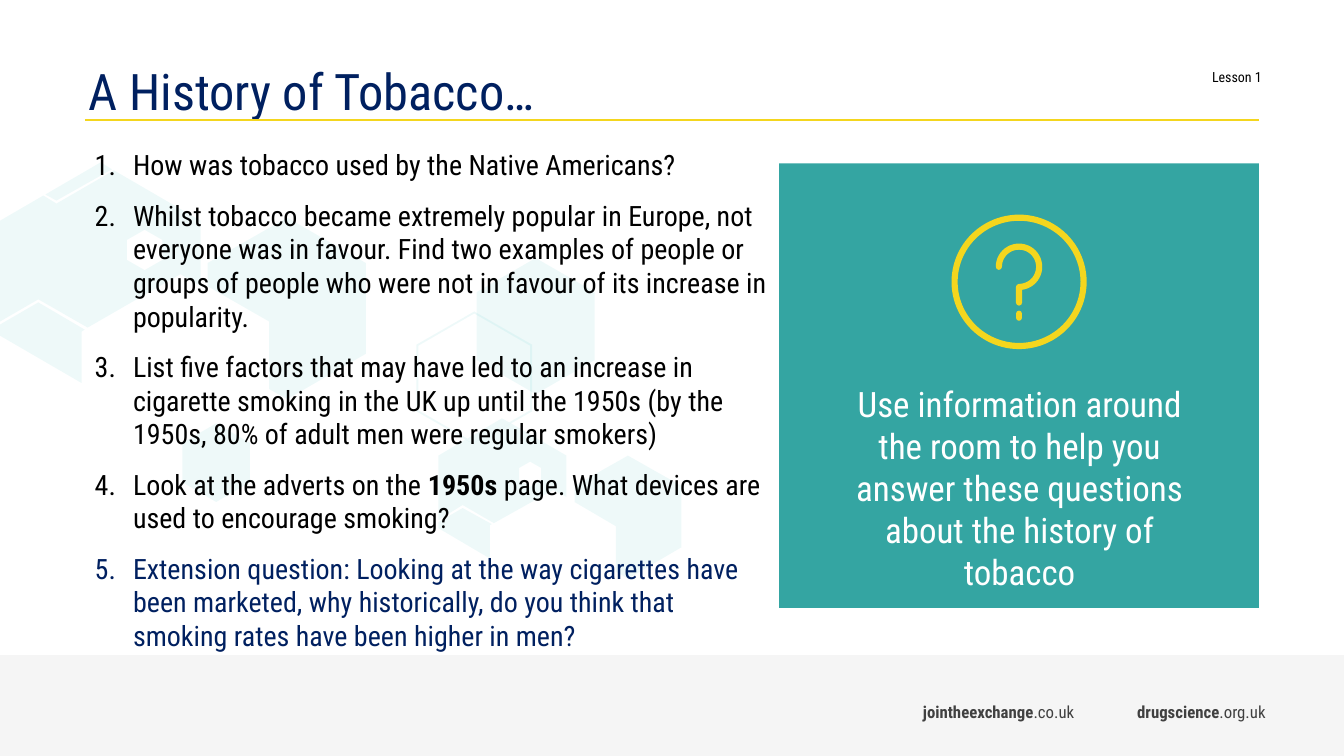
from dataclasses import dataclass
from math import cos, pi, sin

from lxml.etree import SubElement
from pptx import Presentation
from pptx.dml.color import RGBColor
from pptx.enum.shapes import MSO_CONNECTOR as Connector, MSO_SHAPE as Preset
from pptx.enum.text import MSO_ANCHOR as Anchor, MSO_AUTO_SIZE as AutoSize, PP_ALIGN as Align
from pptx.oxml.ns import qn
from pptx.util import Inches, Pt


@dataclass(frozen=True)
class Theme:
    font: str = "Roboto Condensed"
    ink: str = "000000"
    navy: str = "002060"
    grey: str = "404040"
    mist: str = "F2F2F2"
    yellow: str = "F4D61E"
    teal: str = "34A5A2"
    aqua: str = "5AC9CA"
    white: str = "FFFFFF"
    title: int = 36
    prompt: int = 25
    question: int = 20
    link: int = 12
    lesson: int = 10


@dataclass(frozen=True)
class Box:
    col: float
    row: float
    cols: float
    rows: float

    def area(self, col, row, cols, rows):
        return Box(self.col + col, self.row + row, cols, rows)

    def frame(self):
        return [units(n) for n in (self.col, self.row, self.cols, self.rows)]


THEME = Theme()
UNITS_PER_INCH = 12
PAGE = Box(0, 0, 160, 90)

QUESTIONS = [
    ["How was tobacco used by the Native Americans?"],
    ["Whilst tobacco became extremely popular in Europe, not everyone was in favour. Find two "
     "examples of people or groups of people who were not in favour of its increase in popularity."],
    ["List five factors that may have led to an increase in cigarette smoking in the UK up until "
     "the 1950s (by the 1950s, 80% of adult men were regular smokers)"],
    ["Look at the adverts on the ", "1950s", " page. What devices are used to encourage smoking?"],
    ["Extension question: Looking at the way cigarettes have been marketed, why historically, "
     "do you think that smoking rates have been higher in men?"],
]
LINKS = [("jointheexchange", ".co.uk"), ("drugscience", ".org.uk")]


def units(count):
    return Inches(count / UNITS_PER_INCH)


def hexagon(x, y, w, h):
    return [(x + w / 2, y), (x + w, y + h / 4), (x + w, y + h * 3 / 4),
            (x + w / 2, y + h), (x, y + h * 3 / 4), (x, y + h / 4)]


HONEYCOMB = [
    [hexagon(4.13, 3.09, 1.15, 1.32), hexagon(4.15, 3.11, 1.11, 1.28)],
    [[(6.76, 4.82), (6.76, 5.43), (6.23, 5.74), (6.11, 5.67), (6.11, 5.22), (5.7, 4.98),
      (5.7, 4.82), (6.23, 4.52)]],
    [[(4.98, 4.15), (4.64, 4.35), (4.71, 4.39), (5.05, 4.19)],
     [(5.07, 4.2), (4.71, 4.41), (4.62, 4.36), (4.35, 4.52), (4.35, 5.16), (4.59, 5.01),
      (4.9, 5.19), (5.49, 4.86), (5.62, 4.93), (5.62, 4.52)],
     hexagon(5.15, 4.58, 0.22, 0.25),
     [(4.59, 5.04), (4.35, 5.18), (4.35, 5.24), (4.86, 5.54), (4.86, 5.21), (4.88, 5.2)]],
    [hexagon(4.73, 2.56, 1.17, 1.35)],
    [[(0.84, 3.27), (0.81, 3.29), (0.81, 3.8), (0, 3.33), (0, 3.22), (0.38, 3)],
     hexagon(1.26, 2.28, 0.35, 0.4),
     [(1.99, 2.19), (1.99, 2.84), (1.79, 2.72), (0.87, 3.25), (0.38, 2.97), (0, 3.19),
      (0, 2.19), (0.43, 1.94), (0.56, 2.02), (1.13, 1.69)],
     [(1, 1.61), (1.11, 1.68), (0.56, 1.99), (0.45, 1.93)]],
    [hexagon(1.81, 4.2, 0.67, 0.78)],
    [[(2.85, 2.16), (2.06, 2.61), (2.06, 2.84), (2.67, 3.19), (2.67, 3.86), (2.85, 3.96),
      (3.63, 3.51), (3.63, 2.61)]],
]


def assign(target, values):
    for name, value in values.items():
        setattr(target, name, value)


def rgb(colour):
    return RGBColor.from_string(colour)


def write(paragraph, phrases, size, colour, bold_phrase=None):
    for index, words in enumerate(phrases):
        run = paragraph.add_run()
        run.text = words
        assign(run.font, {"name": THEME.font, "size": Pt(size), "bold": index == bold_phrase})
        run.font.color.rgb = rgb(colour)


def text_frame(slide, box, **values):
    frame = slide.shapes.add_textbox(*box.frame()).text_frame
    assign(frame, {"word_wrap": True, **values})
    return frame


def paint(shape, colour, opacity=100):
    shape.shadow.inherit = False
    shape.fill.solid()
    shape.fill.fore_color.rgb = rgb(colour)
    shape.line.fill.background()
    if opacity < 100:
        tint = shape._element.spPr.find(qn("a:solidFill"))[0]
        SubElement(tint, qn("a:alpha")).set("val", str(opacity * 1000))


def stroke(shape, colour, width):
    shape.shadow.inherit = False
    shape.fill.background()
    shape.line.color.rgb = rgb(colour)
    shape.line.width = Pt(width)


def outline(slide, contours, close):
    scaled = [[(units(x), units(y)) for x, y in contour] for contour in contours]
    builder = slide.shapes.build_freeform(*scaled[0][0])
    for index, contour in enumerate(scaled):
        if index:
            builder.move_to(*contour[0])
        builder.add_line_segments(contour[1:], close=close)
    return builder.convert_to_shape()


def honeycomb(slide, box):
    for cell in HONEYCOMB:
        contours = [[(box.col + x * UNITS_PER_INCH, box.row + y * UNITS_PER_INCH)
                     for x, y in contour] for contour in cell]
        paint(outline(slide, contours, True), THEME.aqua, 10)


def header(slide, box):
    heading = slide.shapes.title
    assign(heading, dict(zip(("left", "top", "width", "height"),
                             box.area(9.36, 6.84, 135.5, 6.72).frame())))
    assign(heading.text_frame, {"vertical_anchor": Anchor.TOP, "auto_size": AutoSize.NONE,
                                "margin_top": Inches(0.09), "word_wrap": True})
    paragraph = heading.text_frame.paragraphs[0]
    assign(paragraph, {"alignment": Align.LEFT, "line_spacing": 0.9, "space_before": Pt(0)})
    write(paragraph, ["A History of Tobacco…"], THEME.title, THEME.navy)

    lesson = text_frame(slide, box.area(71.5, 7.56, 79.9, 3.24)).paragraphs[0]
    lesson.alignment = Align.RIGHT
    write(lesson, ["Lesson 1"], THEME.lesson, THEME.ink)

    left, top, width, _ = box.area(10.1, 14.3, 139.8, 0).frame()
    rule = slide.shapes.add_connector(Connector.STRAIGHT, left, top, left + width, top)
    rule.line.color.rgb = rgb(THEME.yellow)
    rule.line.width = Pt(1)
    SubElement(rule._element.spPr, qn("a:effectLst"))


def footer(slide, box):
    paint(slide.shapes.add_shape(Preset.RECTANGLE, *box.frame()), THEME.mist, 75)
    pitch = 25.5
    for index, link in enumerate(LINKS):
        frame = text_frame(slide, box.area(108.7 + index * pitch, 4.3, pitch, 4.8),
                           margin_top=Inches(0.1), margin_bottom=Inches(0.1))
        write(frame.paragraphs[0], link, THEME.link, THEME.grey, bold_phrase=0)


def question_list(slide, box):
    frame = text_frame(slide, box)
    for index, phrases in enumerate(QUESTIONS):
        paragraph = frame.add_paragraph() if index else frame.paragraphs[0]
        indent = Inches(0.38)
        properties = paragraph._p.get_or_add_pPr()
        properties.set("marL", str(indent))
        properties.set("indent", str(-indent))
        SubElement(properties, qn("a:buFont")).set("typeface", THEME.font)
        SubElement(properties, qn("a:buAutoNum")).set("type", "arabicPeriod")
        paragraph.space_after = Pt(12)
        colour = THEME.navy if phrases is QUESTIONS[-1] else THEME.ink
        write(paragraph, phrases, THEME.question, colour, bold_phrase=1)


def question_icon(slide, box):
    inset, weight = 0.36, 4.4
    ring_box = box.area(inset, inset, box.cols - 2 * inset, box.rows - 2 * inset)
    stroke(slide.shapes.add_shape(Preset.OVAL, *ring_box.frame()), THEME.yellow, weight)
    x, y = box.col + box.cols / 2, box.row + box.rows / 2
    radius, steps = 2.4, 36
    angles = [pi + 1.5 * pi * step / steps for step in range(steps + 1)]
    hook = [(x + radius * cos(a), y - 1.8 + radius * sin(a)) for a in angles]
    dot = [(x, y + 3.78), (x, y + 4.26)]
    mark = outline(slide, [hook + [(x, y + 2.46)], dot], False)
    stroke(mark, THEME.yellow, weight)
    mark._element.spPr.find(qn("a:ln")).set("cap", "rnd")


def prompt_panel(slide, box):
    paint(slide.shapes.add_shape(Preset.RECTANGLE, *box.frame()), THEME.teal)
    question_icon(slide, box.area(20.52, 6.12, 16.08, 16))
    prompt = text_frame(slide, box.area(5.64, 25.56, 45.96, 21.36)).paragraphs[0]
    prompt.alignment = Align.CENTER
    write(prompt, ["Use information around the room to help you answer these questions "
                   "about the history of tobacco"], THEME.prompt, THEME.white)


def lesson_slide(deck, box):
    slide = deck.slides.add_slide(deck.slide_layouts[5])
    footer(slide, box.area(0, 78, box.cols, 12))
    honeycomb(slide, box)
    header(slide, box)
    question_list(slide, box.area(10.1, 17, 82.8, 57.7))
    prompt_panel(slide, box.area(92.76, 19.44, 57.12, 52.92))


def main():
    deck = Presentation()
    assign(deck, {"slide_width": units(PAGE.cols), "slide_height": units(PAGE.rows)})
    lesson_slide(deck, PAGE)
    deck.save("out.pptx")


if __name__ == "__main__":
    main()
